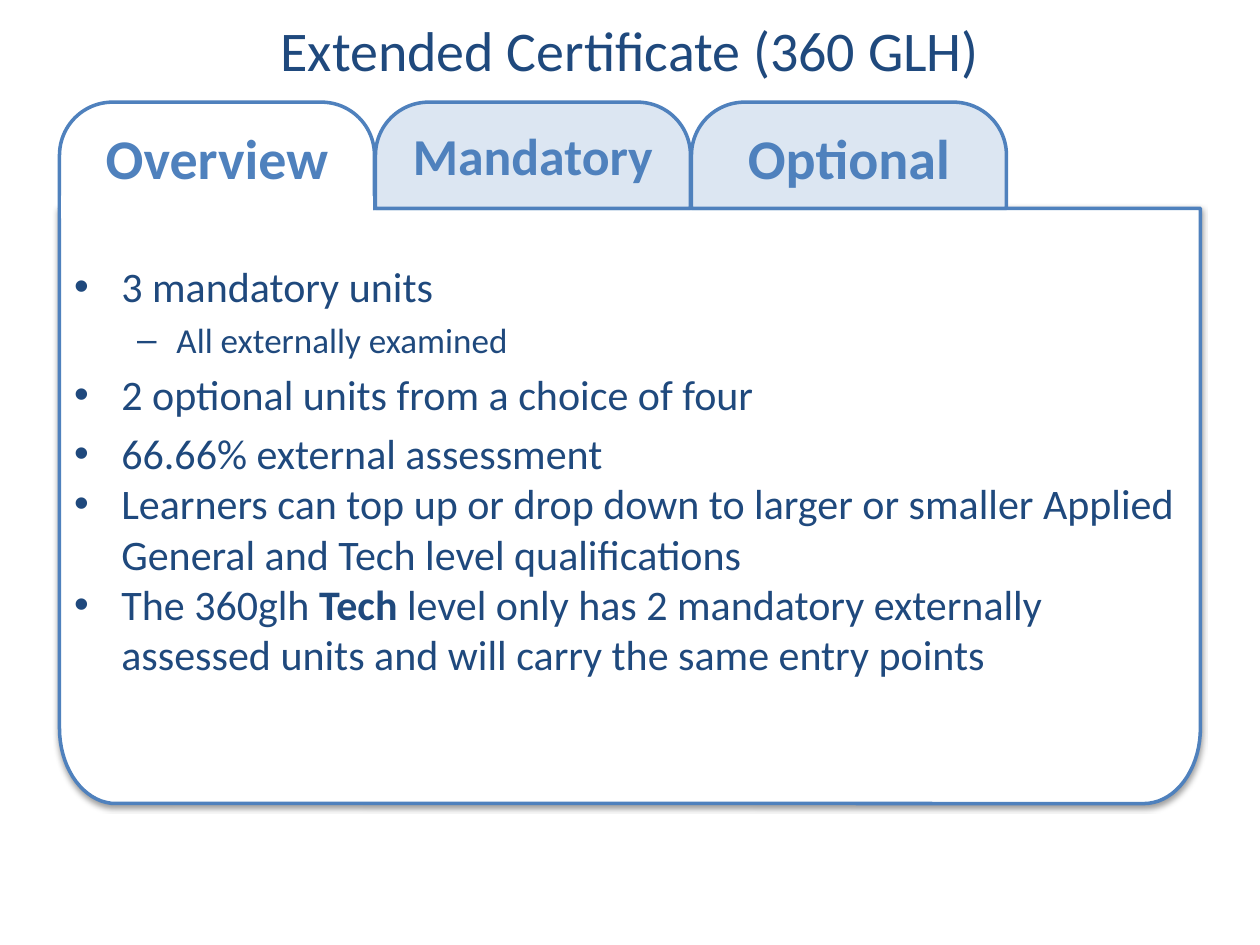
from math import cos, radians, sin

from lxml.etree import SubElement
from pptx import Presentation
from pptx.dml.color import RGBColor
from pptx.enum.shapes import MSO_SHAPE as Shape
from pptx.enum.text import MSO_ANCHOR as Anchor, MSO_AUTO_SIZE as AutoSize, PP_ALIGN as Align
from pptx.oxml.ns import qn
from pptx.util import Cm, Pt

NAVY, BLUE, PALE, WHITE = "1F497D", "4F81BD", "DCE6F2", "FFFFFF"
FONT = "Calibri"


def rgb(value):
    return RGBColor.from_string(value)


def place(sp, x, y, w, h):
    sp.left, sp.top, sp.width, sp.height = Cm(x), Cm(y), Cm(w), Cm(h)


def paint(sp, fill, line):
    sp.shadow.inherit = False
    sp.fill.solid()
    sp.fill.fore_color.rgb = rgb(fill)
    sp.line.color.rgb = rgb(line)
    sp.line.width = Pt(2)


def add_run(p, text, size, color, bold=False):
    r = p.add_run()
    r.text = text
    r.font.name, r.font.size, r.font.bold = FONT, Pt(size), bold
    r.font.color.rgb = rgb(color)


def add_title(slide, x, y, w, h):
    sp = slide.shapes.title
    place(sp, x, y, w, h)
    tf = sp.text_frame
    tf.auto_size = AutoSize.NONE
    tf.vertical_anchor = Anchor.MIDDLE
    p = tf.paragraphs[0]
    p.alignment = Align.CENTER
    add_run(p, "Extended Certificate (360 GLH)", 32, NAVY)


def add_panel(slide, x, y, w, h, rx=1.14, ry=1.52):
    """Card with square top corners and rounded bottom corners."""
    angles = [radians(a) for a in range(0, 181, 5)]
    points = [(x + w, y)]
    for a in angles:
        # The right half of the sweep is the right corner, the left half the left one
        cx = x + w - rx if a <= radians(90) else x + rx
        points.append((cx + rx * cos(a), y + h - ry + ry * sin(a)))
    builder = slide.shapes.build_freeform(Cm(x), Cm(y))
    builder.add_line_segments([(Cm(px), Cm(py)) for px, py in points], close=True)
    sp = builder.convert_to_shape()
    paint(sp, WHITE, BLUE)
    # Soft shadow below the card
    effects = sp.element.spPr.find(qn("a:effectLst"))
    shadow = SubElement(effects, qn("a:outerShdw"), blurRad=str(Pt(3.1)),
                        dist=str(Pt(1.6)), dir="5400000", rotWithShape="0")
    color = SubElement(shadow, qn("a:srgbClr"), val="000000")
    SubElement(color, qn("a:alpha"), val="38000")


def add_tabs(slide, x, y, w, h, pitch=6.37):
    tabs = [("Overview", 32, WHITE), ("Mandatory", 29.6, PALE), ("Optional", 32, PALE)]
    # The first tab lies in front, so the row is drawn from the right
    for i, (label, size, fill) in reversed(list(enumerate(tabs))):
        sp = slide.shapes.add_shape(Shape.ROUND_2_SAME_RECTANGLE,
                                    Cm(x + i * pitch), Cm(y), Cm(w), Cm(h))
        sp.adjustments[0], sp.adjustments[1] = 0.5, 0
        paint(sp, fill, BLUE)
        tf = sp.text_frame
        tf.vertical_anchor = Anchor.TOP
        p = tf.paragraphs[0]
        p.alignment = Align.CENTER
        add_run(p, label, size, BLUE, bold=True)


def add_list(slide, x, y, w, h):
    # Level, space before, runs as (text, bold)
    items = [
        (0, 0, [("3 mandatory units", False)]),
        (1, 4, [("All externally examined", False)]),
        (0, 4.8, [("2 optional units from a choice of four", False)]),
        (0, 4.8, [("66.66% external assessment", False)]),
        (0, 0, [("Learners can top up or drop down to larger or smaller Applied "
                 "General and Tech level qualifications", False)]),
        (0, 0, [("The 360glh ", False), ("Tech", True),
                (" level only has 2 mandatory externally assessed units and will "
                 "carry the same entry points", False)]),
    ]
    sp = slide.placeholders[1]
    place(sp, x, y, w, h)
    slide.shapes.element.append(sp.element)  # bring in front of the panel
    tf = sp.text_frame
    tf.auto_size = AutoSize.NONE
    tf.vertical_anchor = Anchor.TOP
    for i, (level, before, runs) in enumerate(items):
        p = tf.add_paragraph() if i else tf.paragraphs[0]
        p.level, p.space_before = level, Pt(before)
        for text, bold in runs:
            add_run(p, text, 20 if level else 24, NAVY, bold)


def add_tab_opening(slide, x, y, w, h):
    """White strip that joins the active tab to the panel."""
    sp = slide.shapes.add_shape(Shape.RECTANGLE, Cm(x), Cm(y), Cm(w), Cm(h))
    paint(sp, WHITE, WHITE)


def main():
    prs = Presentation()
    prs.slide_width, prs.slide_height = Cm(25.4), Cm(19.05)
    slide = prs.slides.add_slide(prs.slide_layouts[1])
    add_title(slide, 0, 0, 25.4, 2)
    add_panel(slide, 1.2, 4.2, 23, 12)
    add_tabs(slide, 1.2, 2.06, 6.35, 2.14)
    add_list(slide, 1.24, 5.13, 23, 10.13)
    add_tab_opening(slide, 1.27, 3.96, 6.22, 0.43)
    prs.save("out.pptx")


if __name__ == "__main__":
    main()
